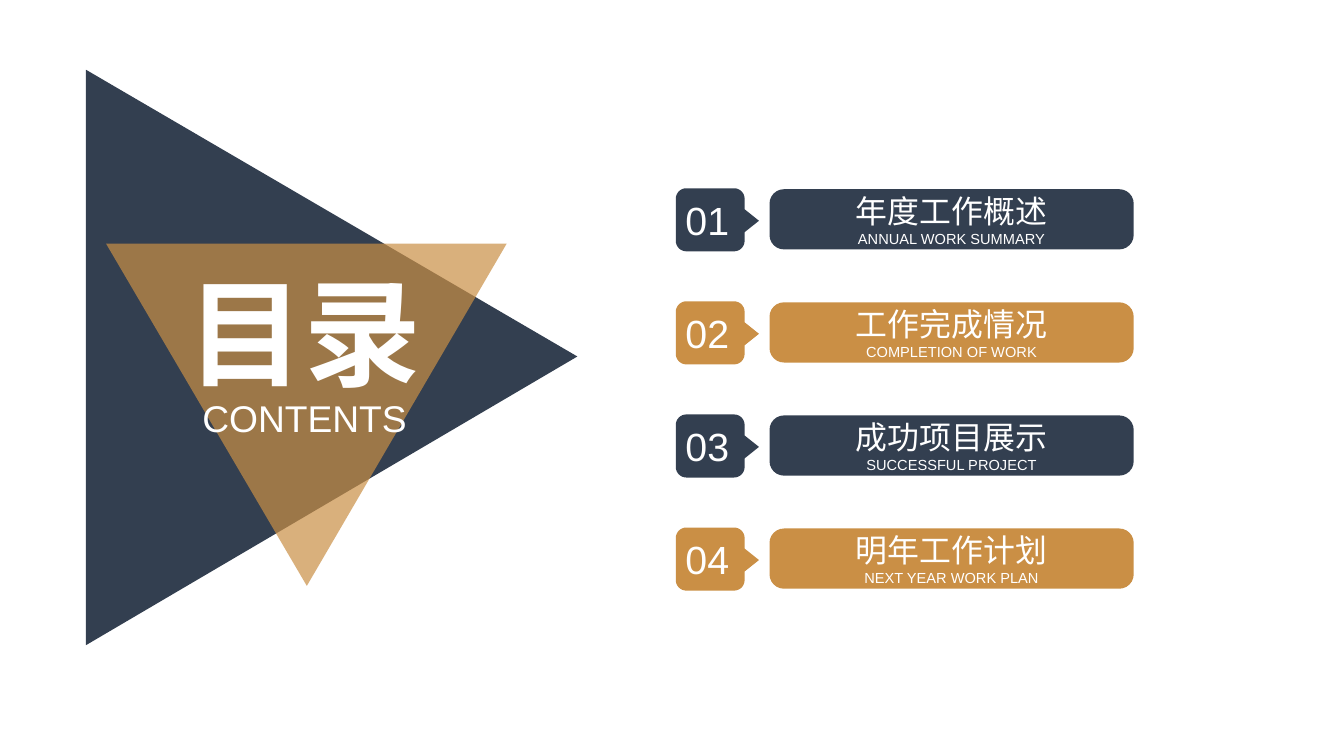
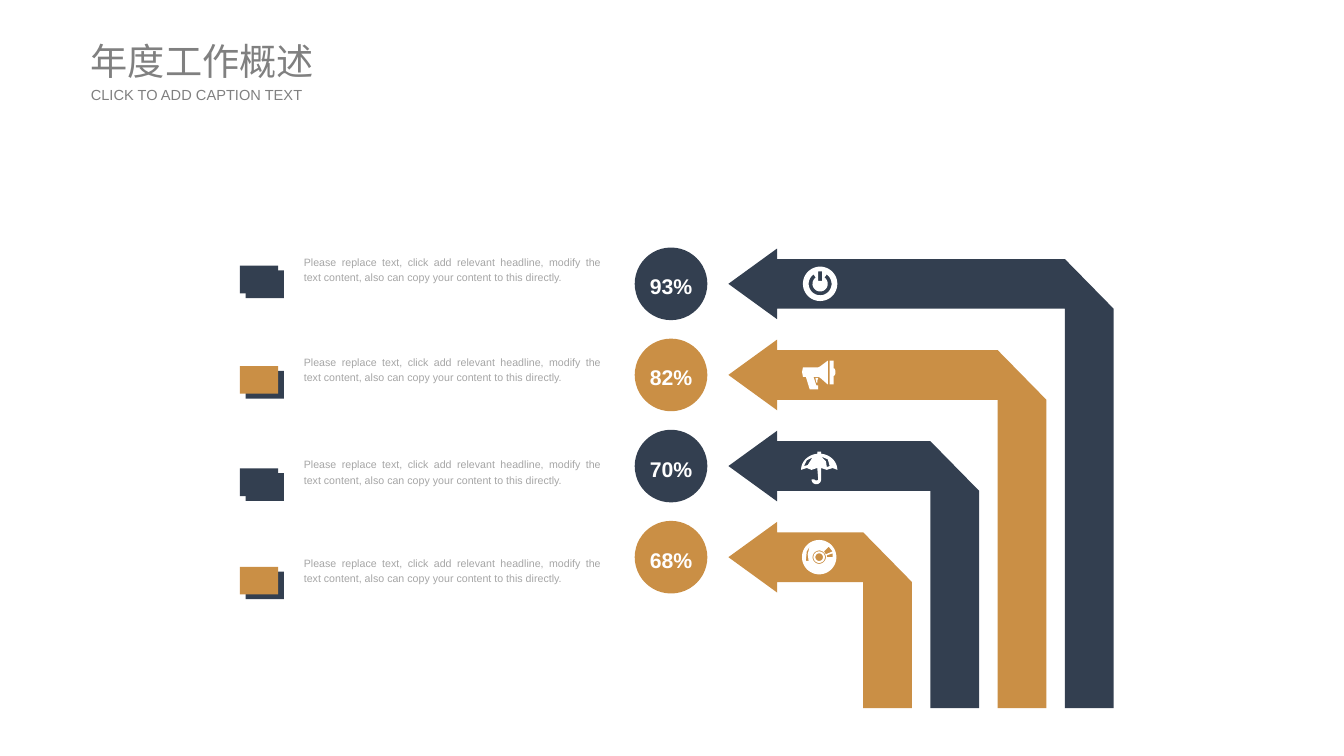
from math import cos, radians, sin

from lxml.etree import SubElement
from pptx import Presentation
from pptx.dml.color import RGBColor as Rgb
from pptx.enum.shapes import MSO_SHAPE as Kind
from pptx.enum.text import MSO_ANCHOR as Anchor, MSO_AUTO_SIZE as Fit, PP_ALIGN as Align
from pptx.oxml.ns import qn
from pptx.util import Inches, Pt

COLORS = {"navy": "333F50", "gold": "CA8F45", "white": "FFFFFF",
          "gray": "808080", "pale": "A6A6A6"}
PAIR = ("navy", "gold")

# name: (colour, font values, paragraph values)
STYLES = {
    "cover": ("white", {"size": Pt(88), "bold": True}, {"alignment": Align.CENTER}),
    "under": ("white", {"size": Pt(28)}, {"alignment": Align.CENTER}),
    "number": ("white", {"size": Pt(29.6)}, {"alignment": Align.CENTER}),
    "topic": ("white", {"size": Pt(24)}, {"alignment": Align.CENTER}),
    "label": ("white", {"size": Pt(11)}, {"alignment": Align.CENTER}),
    "rate": ("white", {"size": Pt(16), "bold": True},
             {"alignment": Align.CENTER, "line_spacing": 1.2}),
    "note": ("pale", {"size": Pt(8)},
             {"alignment": Align.JUSTIFY, "line_spacing": 1.2}),
    "title": ("gray", {"size": Pt(28)}, {"alignment": Align.LEFT}),
    "caption": ("gray", {"size": Pt(11)}, {"alignment": Align.LEFT}),
}

TOPICS = [
    ("年度工作概述", "ANNUAL WORK SUMMARY"),
    ("工作完成情况", "COMPLETION OF WORK"),
    ("成功项目展示", "SUCCESSFUL PROJECT"),
    ("明年工作计划", "NEXT YEAR WORK PLAN"),
]
NOTE = ("Please replace text, click add relevant headline, modify the text "
        "content, also can copy your content to this directly.")


def arc(x, y, wide, high, start, end, steps=24):
    """Points on an ellipse, angles in degrees, clockwise from the right."""
    turns = [radians(start + (end - start) * i / steps) for i in range(steps + 1)]
    return [(x + wide * cos(t), y + high * sin(t)) for t in turns]


def ring(size):
    return arc(0, 0, size, size, 0, 360, 48)


def box(left, top, right, bottom):
    return [(left, top), (right, top), (right, bottom), (left, bottom)]


# Icon outlines around their own centre; inner outlines cut holes.
POWER = [
    ring(0.18),
    box(-0.02, -0.13, 0.02, -0.03),
    arc(0, 0, 0.12, 0.12, -55, 235) + arc(0, 0, 0.08, 0.08, 235, -55),
]
HORN = [
    [(-0.18, -0.08), (-0.02, -0.08), (0, -0.09), (0.08, -0.15), (0.08, 0.1),
     (0, 0.03), (-0.02, 0.02), (-0.07, 0.02), (-0.04, 0.11), (-0.02, 0.11),
     (-0.02, 0.15), (-0.11, 0.15), (-0.15, 0.02), (-0.18, 0.02), (-0.19, -0.03)],
    arc(0.14, -0.03, 0.02, 0.04, -90, 90)
    + [(0.14, 0.1), (0.1, 0.1), (0.1, -0.15), (0.14, -0.15)],
    [(-0.02, 0.03), (-0.05, 0.03), (-0.04, 0.08), (-0.03, 0.08), (-0.03, 0.06)],
]
SHADE = [
    arc(0, 0.04, 0.19, 0.17, 180, 360)
    + [(0.14, 0.02), (0.08, 0.04), (0.02, 0.02)]
    + arc(-0.03, 0.14, 0.05, 0.05, 0, 180)
    + arc(-0.03, 0.14, 0.02, 0.01, 180, 0)
    + [(-0.02, 0.02), (-0.08, 0.04), (-0.13, 0.02)],
    box(-0.02, -0.15, 0.02, -0.13),
    [(0.08, 0.01), (0.11, 0), (0.09, -0.07), (0.02, -0.1), (0.07, -0.05)],
    [(-0.16, 0), (-0.12, -0.01), (-0.07, -0.09), (-0.13, -0.06)],
]
DISC = [
    ring(0.18), ring(0.07), ring(0.06), ring(0.04),
    [(-0.1, -0.11), (-0.13, -0.06), (-0.14, 0.04), (-0.11, 0.04), (-0.12, -0.03)],
    [(0.05, -0.06), (0.1, -0.11), (0.14, -0.06), (0.07, -0.03)],
    [(0.14, -0.04), (0.08, -0.02), (0.08, 0), (0.14, 0)],
]


class Deck:
    font = "Arial"

    def __init__(self, wide, high):
        self.show = Presentation()
        self.show.slide_width = Inches(wide)
        self.show.slide_height = Inches(high)

    def start(self):
        self.slide = self.show.slides.add_slide(self.show.slide_layouts[5])
        self.shapes = self.slide.shapes

    def label(self, shape, lines, pad=(0, 0, 0, 0), anchor=Anchor.MIDDLE):
        """Fill a shape with (text, style) lines."""
        frame = shape.text_frame
        sides = dict(zip(("left", "top", "right", "bottom"), pad))
        values = {f"margin_{side}": Inches(gap) for side, gap in sides.items()}
        values.update(word_wrap=True, auto_size=Fit.NONE, vertical_anchor=anchor)
        for key, value in values.items():
            setattr(frame, key, value)
        for i, (text, style) in enumerate(lines):
            color, font, layout = STYLES[style]
            para = frame.add_paragraph() if i else frame.paragraphs[0]
            for key, value in layout.items():
                setattr(para, key, value)
            run = para.add_run()
            run.text = text
            for key, value in {"name": self.font, **font}.items():
                setattr(run.font, key, value)
            run.font.color.rgb = Rgb.from_string(COLORS[color])

    def paint(self, shape, color, alpha=None):
        shape.shadow.inherit = False
        shape.line.fill.background()
        shape.fill.solid()
        shape.fill.fore_color.rgb = Rgb.from_string(COLORS[color])
        if alpha:
            tint = shape.element.spPr.find(".//" + qn("a:srgbClr"))
            SubElement(tint, qn("a:alpha"), val=str(alpha * 1000))
        return shape

    def title(self, text, style, place, anchor=Anchor.MIDDLE):
        """Put the title placeholder in front of all shapes made so far."""
        shape = self.shapes.title
        names = ("left", "top", "width", "height")
        for name, value in zip(names, place):
            setattr(shape, name, Inches(value))
        self.label(shape, [(text, style)], anchor=anchor)
        shape.element.getparent().append(shape.element)

    def text(self, text, style, place, **frame):
        shape = self.shapes.add_textbox(*map(Inches, place))
        self.label(shape, [(text, style)], **frame)

    def shape(self, kind, color, place):
        return self.paint(self.shapes.add_shape(kind, *map(Inches, place)), color)

    def outline(self, color, *loops, x=0, y=0, alpha=None):
        """Draw closed loops of points, moved by x and y, as one shape."""
        pen = None
        for loop in loops:
            spots = [(Inches(x + a), Inches(y + b)) for a, b in loop]
            if pen is None:
                pen = self.shapes.build_freeform(*spots[0])
            else:
                pen.move_to(*spots[0])
            pen.add_line_segments(spots[1:], close=True)
        return self.paint(pen.convert_to_shape(), color, alpha)

    def badge(self, text, color, top):
        """Rounded number tag with a small pointer on its right."""
        edge = (arc(0.11, 0.11, 0.11, 0.11, 180, 270, 8)
                + arc(0.61, 0.11, 0.11, 0.11, 270, 360, 8)
                + [(0.72, 0.22), (0.87, 0.34), (0.72, 0.46)]
                + arc(0.61, 0.55, 0.11, 0.11, 0, 90, 8)
                + arc(0.11, 0.55, 0.11, 0.11, 90, 180, 8))
        tag = self.outline(color, edge, x=7.07, y=top)
        self.label(tag, [(text, "number")], pad=(0, 0.05, 0.21, 0.05))

    def arrow(self, color, right, mid):
        """Bent band that rises from the bottom and points left."""
        half, inner, base, neck = 0.26, right - 0.51, 7.41, 8.13
        self.outline(color, [
            (neck, mid - 0.37), (neck, mid - half), (inner, mid - half),
            (right, mid + half), (right, base), (inner, base),
            (inner, mid + half), (neck, mid + half), (neck, mid + 0.37),
            (7.62, mid)])


def contents(deck):
    deck.start()
    deck.outline("navy", [(0.9, 6.75), (0.9, 0.73), (6.04, 3.73)])
    deck.outline("gold", [(1.11, 2.55), (5.3, 2.55), (3.21, 6.13)], alpha=70)
    for i, (topic, label) in enumerate(TOPICS):
        color, top = PAIR[i % 2], 1.98 + 3.55 * i / 3
        bar = deck.shape(Kind.ROUNDED_RECTANGLE, color, (8.05, top, 3.81, 0.63))
        bar.adjustments[0] = 0.24
        deck.label(bar, [(topic, "topic"), (label, "label")])
        deck.badge(f"{i + 1:02}", color, top - 0.01)
    deck.title("目录", "cover", (1.94, 2.73, 2.49, 1.48), Anchor.TOP)
    deck.text("CONTENTS", "under", (1.88, 4.14, 2.61, 0.47), anchor=Anchor.TOP)


def summary(deck):
    deck.start()
    rows = [("93%", POWER, 8.58, 2.78), ("82%", HORN, 8.58, 3.83),
            ("70%", SHADE, 8.57, 4.9), ("68%", DISC, 8.57, 5.93)]
    for i, (rate, icon, x, top) in enumerate(rows):
        color, mid = PAIR[i % 2], 2.97 + 2.86 * i / 3
        disc = deck.shape(Kind.OVAL, color, (6.64, mid - 0.38, 0.76, 0.76))
        deck.label(disc, [(rate, "rate")])
        deck.arrow(color, 11.65 - 2.11 * i / 3, mid)
        deck.outline("white", *icon, x=x, y=mid)
        deck.shape(Kind.RECTANGLE, "navy", (2.57, top + 0.05, 0.4, 0.29))
        deck.shape(Kind.RECTANGLE, color, (2.51, top, 0.4, 0.29))
        deck.text(NOTE, "note", (3.08, top - 0.18, 3.31, 0.41),
                  pad=(0.1, 0.05, 0.1, 0.05), anchor=Anchor.TOP)
    deck.title(TOPICS[0][0], "title", (0.95, 0.39, 2.53, 0.49))
    deck.text("CLICK TO ADD CAPTION TEXT", "caption", (0.95, 0.9, 2.53, 0.19))


def main():
    deck = Deck(14.06, 7.91)
    contents(deck)
    summary(deck)
    deck.show.save("out.pptx")


if __name__ == "__main__":
    main()
